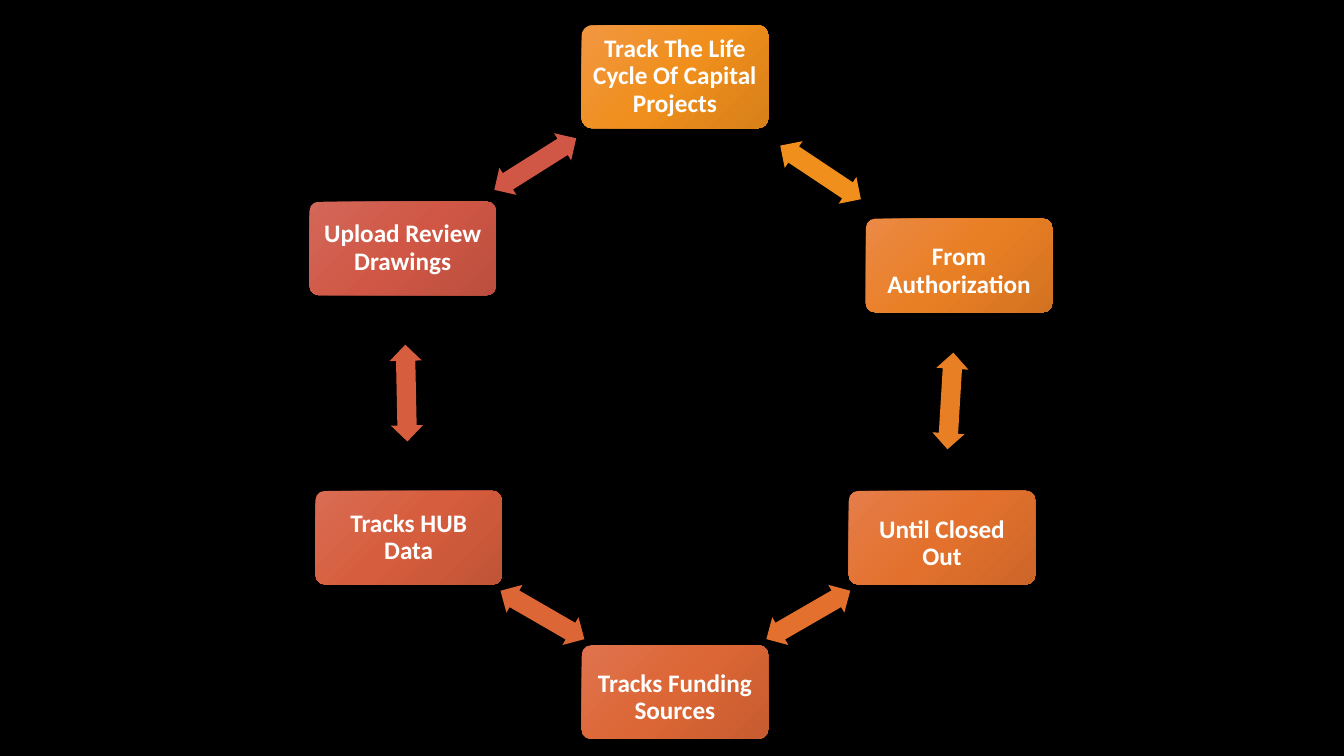
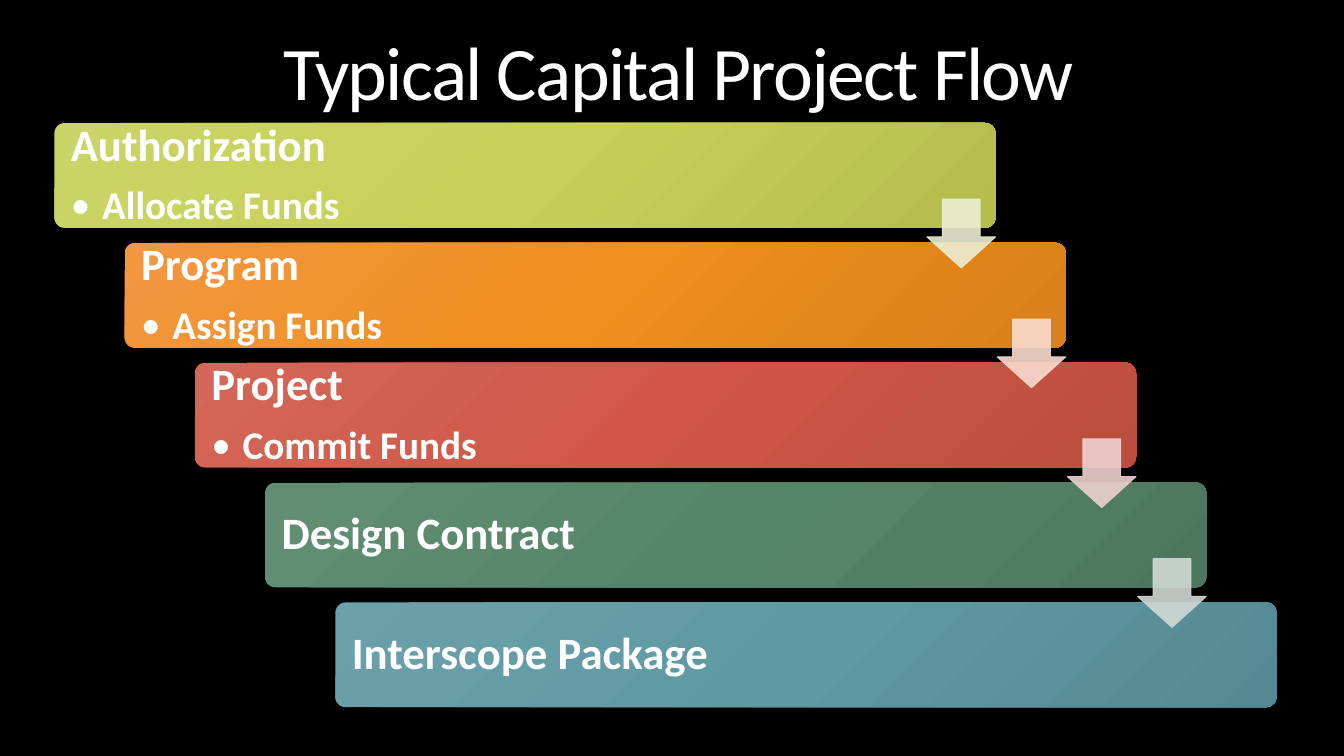
from copy import deepcopy

from pptx import Presentation
from pptx.dml.color import RGBColor
from pptx.enum.shapes import MSO_SHAPE as Preset
from pptx.enum.text import MSO_ANCHOR as Anchor, PP_ALIGN as Align
from pptx.oxml.ns import qn
from pptx.oxml.xmlchemy import OxmlElement
from pptx.util import Cm, Pt

FONT = "Calibri"

# Single colours
COLORS = {
    "background": "000000",
    "text": "FFFFFF",
    "pale_lime": "EBEED1",
    "pale_amber": "F9DBCD",
    "pale_red": "EED1CF",
    "pale_green": "D1D9D4",
}

# Gradients: light, middle and dark stop
GRADIENTS = {
    "amber": ("F19742", "F08F1C", "D88019"),
    "orange": ("EB8945", "E97F24", "D27221"),
    "tangerine": ("E57D49", "E3712D", "CC6628"),
    "rust": ("DF734E", "DC6635", "C65C30"),
    "coral": ("D96C53", "D65D3D", "C05437"),
    "red": ("D36759", "D05745", "BB4E3E"),
    "lime": ("CBD467", "C7D157", "B4BD4D"),
    "green": ("638E74", "558569", "4C775E"),
    "teal": ("6CA0AA", "5E99A4", "548993"),
}

# Cycle: text, gradient, box (left, top, height), text drop,
# arrow to the next box (left, top, rotation)
CYCLE = [
    ("Track The Life Cycle Of Capital Projects", "amber",
     (14.66, 0.64, 2.59), 0, (19.46, 3.94, 33.6)),
    ("From Authorization", "orange",
     (21.82, 5.51, 2.36), 0.3, (22.73, 9.7, 93.5)),
    ("Until Closed Out", "tangerine",
     (21.39, 12.37, 2.36), 0.3, (19.15, 15.09, 150)),
    ("Tracks Funding Sources", "rust",
     (14.66, 16.26, 2.36), 0.3, (12.45, 15.09, 210)),
    ("Tracks HUB Data", "coral",
     (7.95, 12.37, 2.36), 0, (9.02, 9.5, 268.8)),
    ("Upload Review Drawings", "red",
     (7.8, 5.08, 2.36), 0, (12.27, 3.73, 327.8)),
]
CYCLE_BOX_WIDTH = 4.7
CYCLE_ARROW = (2.44, 0.81)

# Flow: heading, bullet, gradient, colour of the arrow below
FLOW = [
    ("Authorization", "Allocate Funds", "lime", "pale_lime"),
    ("Program", "Assign Funds", "amber", "pale_amber"),
    ("Project", "Commit Funds", "red", "pale_red"),
    ("Design Contract", None, "green", "pale_green"),
    ("Interscope Package", None, "teal", None),
]
BAR_LEFT, BAR_TOP = 1.37, 3.1
BAR_WIDTH, BAR_HEIGHT = 23.72, 2.64
STEP_X, STEP_Y = 1.77, 3.02
FLOW_ARROW = 1.73
FLOW_ARROW_DROP = 1.92


def add_slide(presentation):
    slide = presentation.slides.add_slide(presentation.slide_layouts[6])
    fill_solid(slide.background.fill, COLORS["background"])
    return slide


def add_preset(slide, preset, left, top, width, height, adjustments):
    shape = slide.shapes.add_shape(
        preset, Cm(left), Cm(top), Cm(width), Cm(height))
    shape.shadow.inherit = False
    shape.line.fill.background()
    for index, value in enumerate(adjustments):
        shape.adjustments[index] = value
    return shape


def fill_solid(fill, color):
    fill.solid()
    fill.fore_color.rgb = RGBColor.from_string(color)


def fill_gradient(shape, stops):
    shape.fill.gradient()
    shape.fill.gradient_angle = 315
    stop_list = shape._element.spPr.find(qn("a:gradFill")).find(qn("a:gsLst"))
    stop_list.append(deepcopy(stop_list[0]))
    for index, stop in enumerate(shape.fill.gradient_stops):
        stop.position = index / 2
        stop.color.rgb = RGBColor.from_string(stops[index])


def set_opacity(shape, percent):
    """Apply one opacity to the fill and the line."""
    for color in shape._element.spPr.iter(qn("a:srgbClr")):
        alpha = OxmlElement("a:alpha")
        alpha.set("val", str(percent * 1000))
        color.append(alpha)


def set_frame(shape, side=0.2, top=0.0):
    frame = shape.text_frame
    frame.word_wrap = True
    frame.vertical_anchor = Anchor.MIDDLE
    frame.margin_left = frame.margin_right = Cm(side)
    frame.margin_top, frame.margin_bottom = Cm(top), Cm(0)
    return frame


def set_bullet(paragraph, indent):
    paragraph.level = 1
    properties = paragraph._p.get_or_add_pPr()
    properties.set("marL", str(Cm(indent)))
    properties.set("indent", str(-Cm(indent)))
    for tag, key, value in (("a:buFont", "typeface", FONT),
                            ("a:buChar", "char", "•")):
        element = OxmlElement(tag)
        element.set(key, value)
        properties.append(element)


def write_text(frame, text, size=18, bold=True, align=Align.LEFT,
               line_spacing=0.9, space_after=0, tracking=None, bullet=False):
    paragraph = frame.paragraphs[0]
    if paragraph.runs:
        paragraph = frame.add_paragraph()
    paragraph.alignment = align
    paragraph.line_spacing = line_spacing
    paragraph.space_after = Pt(space_after)
    if bullet:
        set_bullet(paragraph, 0.79)
    run = paragraph.add_run()
    run.text = text
    run.font.name = FONT
    run.font.size = Pt(size)
    run.font.bold = bold
    run.font.color.rgb = RGBColor.from_string(COLORS["text"])
    if tracking is not None:
        run._r.get_or_add_rPr().set("spc", str(round(tracking * 100)))


def add_box(slide, left, top, width, height, gradient):
    box = add_preset(slide, Preset.ROUNDED_RECTANGLE,
                     left, top, width, height, [0.1])
    fill_gradient(box, GRADIENTS[gradient])
    return box


def add_cycle_arrow(slide, left, top, rotation, color):
    arrow = add_preset(slide, Preset.LEFT_RIGHT_ARROW,
                       left, top, *CYCLE_ARROW, [0.6, 0.5])
    arrow.rotation = rotation
    fill_solid(arrow.fill, color)


def add_flow_arrow(slide, left, top, color):
    arrow = add_preset(slide, Preset.DOWN_ARROW,
                       left, top, FLOW_ARROW, FLOW_ARROW, [0.55, 0.45])
    fill_solid(arrow.fill, color)
    fill_solid(arrow.line.fill, color)
    arrow.line.width = Pt(0.75)
    set_opacity(arrow, 90)


def add_title(slide, text):
    title = slide.shapes.add_textbox(Cm(1.7), Cm(0.5), Cm(30.81), Cm(2.92))
    write_text(set_frame(title), text, size=54, bold=False,
               align=Align.CENTER, line_spacing=0.85, tracking=-1.2)


def build_cycle(slide):
    for text, gradient, (left, top, height), text_drop, arrow in CYCLE:
        box = add_box(slide, left, top, CYCLE_BOX_WIDTH, height, gradient)
        write_text(set_frame(box, top=text_drop), text, align=Align.CENTER)
        add_cycle_arrow(slide, *arrow, GRADIENTS[gradient][1])


def build_flow(slide):
    add_title(slide, "Typical Capital Project Flow")
    # Stepped bars
    for index, (heading, bullet, gradient, _) in enumerate(FLOW):
        bar = add_box(slide, BAR_LEFT + index * STEP_X,
                      BAR_TOP + index * STEP_Y,
                      BAR_WIDTH, BAR_HEIGHT, gradient)
        frame = set_frame(bar, side=0.34)
        write_text(frame, heading, size=32, space_after=11 if bullet else 0)
        if bullet:
            write_text(frame, bullet, size=28, bullet=True)
    # Arrows, flush with the right end of the bar above
    for index, (*_, arrow_color) in enumerate(FLOW[:-1]):
        add_flow_arrow(
            slide, BAR_LEFT + BAR_WIDTH - FLOW_ARROW + index * STEP_X,
            BAR_TOP + FLOW_ARROW_DROP + index * STEP_Y, COLORS[arrow_color])


def main():
    presentation = Presentation()
    presentation.slide_width = Cm(33.87)
    presentation.slide_height = Cm(19.05)
    build_cycle(add_slide(presentation))
    build_flow(add_slide(presentation))
    presentation.save("out.pptx")


if __name__ == "__main__":
    main()
